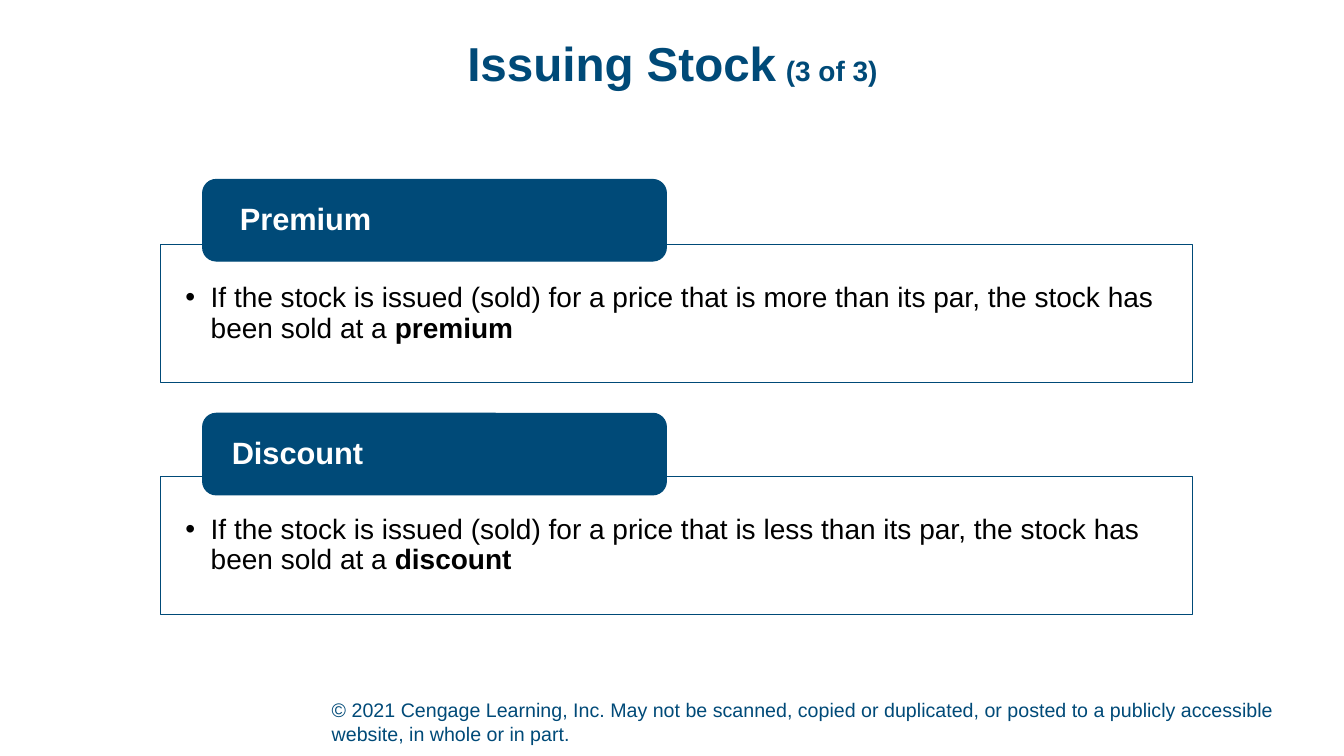
from lxml.etree import SubElement
from pptx import Presentation
from pptx.dml.color import RGBColor
from pptx.enum.shapes import MSO_SHAPE as Shape
from pptx.enum.text import MSO_ANCHOR as Anchor, PP_ALIGN as Align
from pptx.oxml.ns import qn
from pptx.util import Inches, Pt

COLORS = {"navy": "004A78", "white": "FFFFFF", "black": "000000"}
FONT = "Arial"
WIDTH, HEIGHT = 13.33, 7.5

TITLE = [("Issuing Stock", 34, True), (" ", 24, True), ("(3 of 3)", 20, True)]
COPYRIGHT = (
    "© 2021 Cengage Learning, Inc. May not be scanned, copied or duplicated, "
    "or posted to a publicly accessible website, in whole or in part."
)
TERMS = [
    {"label": "Premium", "compare": "more", "indent": 0.33, "tab_top": 1.78, "panel_top": 2.43},
    {"label": "Discount", "compare": "less", "indent": 0.25, "tab_top": 4.1, "panel_top": 4.73},
]
TAB_LEFT, TAB_WIDTH, TAB_HEIGHT = 2.01, 4.6, 0.81
PANEL_LEFT, PANEL_WIDTH, PANEL_HEIGHT = 1.59, 10.24, 1.37


def write(box, spans, color="navy", align=Align.LEFT, anchor=Anchor.MIDDLE,
          spacing=0.9, indent=0, hanging=0, bullet=None, bottom=0):
    frame = box.text_frame
    frame.word_wrap = True
    frame.vertical_anchor = anchor
    frame.margin_left = frame.margin_right = frame.margin_top = 0
    frame.margin_bottom = Inches(bottom)
    para = frame.paragraphs[0]
    para.alignment = align
    para.line_spacing = spacing
    para.space_before = Pt(0)
    settings = para._p.get_or_add_pPr()
    settings.set("marL", str(Inches(indent)))
    settings.set("indent", str(Inches(-hanging)))
    if bullet:
        SubElement(settings, qn("a:buFont"), typeface=FONT)
        SubElement(settings, qn("a:buChar"), char=bullet)
    for text, size, bold in spans:
        span = para.add_run()
        span.text = text
        span.font.name = FONT
        span.font.size = Pt(size)
        span.font.bold = bold
        span.font.color.rgb = RGBColor.from_string(COLORS[color])


def add_box(slide, kind, left, top, width, height, filled=False):
    box = slide.shapes.add_shape(kind, *map(Inches, (left, top, width, height)))
    box.shadow.inherit = False
    navy = RGBColor.from_string(COLORS["navy"])
    if filled:
        box.fill.solid()
        box.fill.fore_color.rgb = navy
    else:
        box.fill.background()
    box.line.color.rgb = navy
    box.line.width = Pt(0.75)
    return box


def add_text(slide, left, top, width, height, spans, **style):
    box = slide.shapes.add_textbox(*map(Inches, (left, top, width, height)))
    write(box, spans, **style)


def main():
    deck = Presentation()
    deck.slide_width, deck.slide_height = Inches(WIDTH), Inches(HEIGHT)
    slide = deck.slides.add_slide(deck.slide_layouts[6])

    add_text(slide, 3.29, 6.92, 9.79, 0.52, [(COPYRIGHT, 14, False)],
             anchor=Anchor.BOTTOM, spacing=1.0, bottom=0.05)
    add_text(slide, 0.92, 0.4, 11.5, 0.74, TITLE, align=Align.CENTER, anchor=Anchor.TOP)

    for term in TERMS:
        tab = add_box(slide, Shape.ROUNDED_RECTANGLE, TAB_LEFT, term["tab_top"],
                      TAB_WIDTH, TAB_HEIGHT, filled=True)
        write(tab, [(term["label"], 22, True)], color="white", indent=term["indent"])
        panel = add_box(slide, Shape.RECTANGLE, PANEL_LEFT, term["panel_top"],
                        PANEL_WIDTH, PANEL_HEIGHT)
        sentence = (f"If the stock is issued (sold) for a price that is {term['compare']} "
                    "than its par, the stock has been sold at a ")
        write(panel, [(sentence, 20, False), (term["label"].lower(), 20, True)],
              color="black", indent=0.5, hanging=0.25, bullet="•")

    deck.save("out.pptx")


if __name__ == "__main__":
    main()
